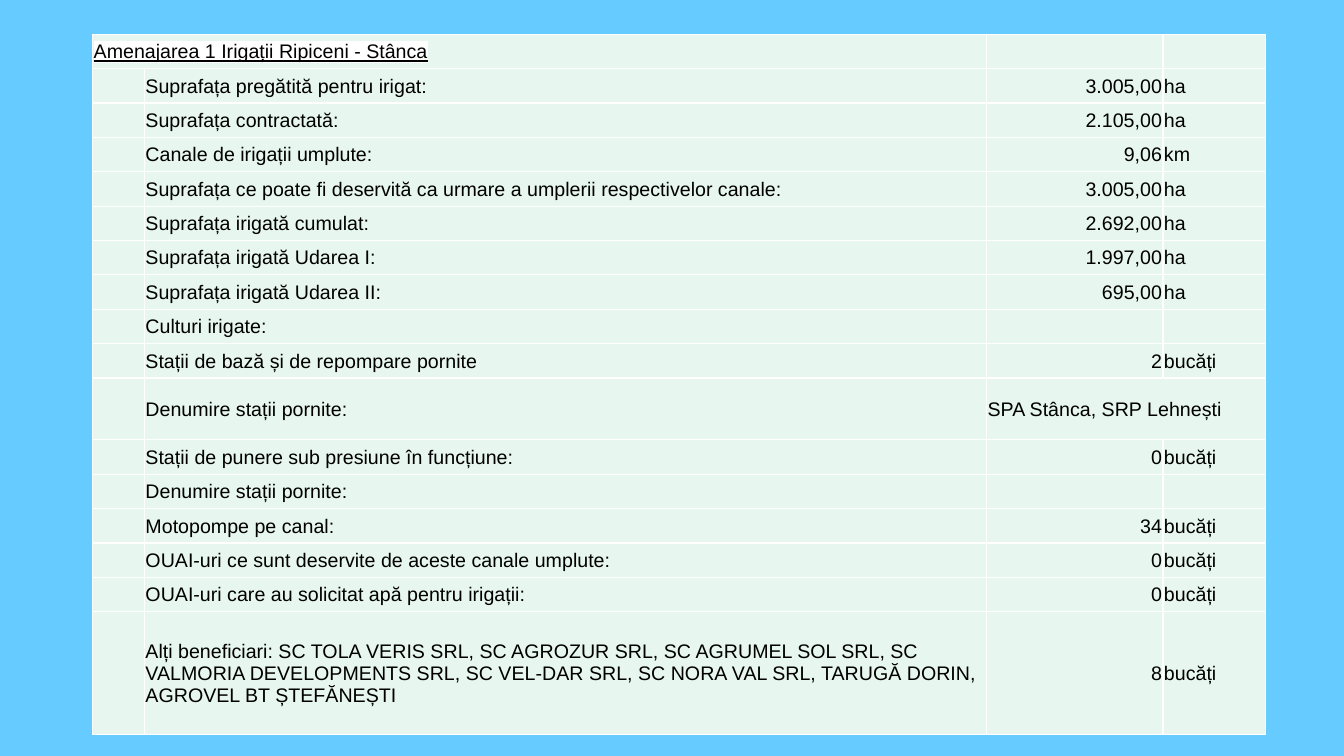
"""Build a slide with the table of irrigation figures for Ripiceni - Stânca."""
from dataclasses import dataclass

from lxml import etree
from pptx import Presentation
from pptx import util as u
from pptx.dml.color import RGBColor
from pptx.enum import text
from pptx.oxml import ns
from pptx.table import Table, _Cell


@dataclass(frozen=True)
class Theme:
    background: str = "66CCFF"
    cell: str = "E7F6EF"
    border: str = "FFFFFF"
    highlight: str = "FFFFFF"
    ink: str = "000000"
    font: str = "Arial"
    size: float = 14
    border_width: float = 1
    inset: float = 0.7


@dataclass(frozen=True)
class Figure:
    label: str
    value: str = ""
    unit: str = ""
    height: float = 24.57


THEME = Theme()
LEFT, TOP = 66.24, 24.5
COLUMN_WIDTHS = (37, 601.5, 126, 73.5)
HEADING = "Amenajarea 1 Irigații Ripiceni - Stânca"
STATIONS = "SPA Stânca, SRP Lehnești"
FIGURES = (
    Figure("Suprafața pregătită pentru irigat:", "3.005,00", "ha"),
    Figure("Suprafața contractată:", "2.105,00", "ha"),
    Figure("Canale de irigații umplute:", "9,06", "km"),
    Figure("Suprafața ce poate fi deservită ca urmare a umplerii respectivelor canale:", "3.005,00", "ha"),
    Figure("Suprafața irigată cumulat:", "2.692,00", "ha"),
    Figure("Suprafața irigată Udarea I:", "1.997,00", "ha"),
    Figure("Suprafața irigată Udarea II:", "695,00", "ha"),
    Figure("Culturi irigate:"),
    Figure("Stații de bază și de repompare pornite", "2", "bucăți"),
    Figure("Denumire stații pornite:", STATIONS, height=44.2),
    Figure("Stații de punere sub presiune în funcțiune:", "0", "bucăți"),
    Figure("Denumire stații pornite:"),
    Figure("Motopompe pe canal:", "34", "bucăți"),
    Figure("OUAI-uri ce sunt deservite de aceste canale umplute:", "0", "bucăți"),
    Figure("OUAI-uri care au solicitat apă pentru irigații:", "0", "bucăți"),
    Figure(
        "Alți beneficiari: SC TOLA VERIS SRL, SC AGROZUR SRL, SC AGRUMEL SOL SRL, SC "
        "VALMORIA DEVELOPMENTS SRL, SC VEL-DAR SRL, SC NORA VAL SRL, TARUGĂ DORIN, "
        "AGROVEL BT ȘTEFĂNEȘTI",
        "8", "bucăți", 87.9,
    ),
)


def add_solid_fill(parent: etree._Element, tag: str, color: str) -> None:
    """Append a DrawingML colour element under the given tag."""
    holder = etree.SubElement(parent, ns.qn(tag))
    etree.SubElement(holder, ns.qn("a:srgbClr"), val=color)


def style_cell(cell: _Cell) -> None:
    """Give a cell its fill, insets, borders and font."""
    cell.margin_left = cell.margin_right = cell.margin_top = u.Pt(THEME.inset)
    cell.margin_bottom = 0
    cell.vertical_anchor = text.MSO_ANCHOR.MIDDLE
    cell.fill.solid()
    cell.fill.fore_color.rgb = RGBColor.from_string(THEME.cell)
    properties = cell._tc.get_or_add_tcPr()
    for index, side in enumerate(("a:lnL", "a:lnR", "a:lnT", "a:lnB")):
        line = etree.Element(ns.qn(side), w=str(u.Pt(THEME.border_width)))
        add_solid_fill(line, "a:solidFill", THEME.border)
        properties.insert(index, line)
    font = cell.text_frame.paragraphs[0].font
    font.name = THEME.font
    font.size = u.Pt(THEME.size)
    font.color.rgb = RGBColor.from_string(THEME.ink)


def fill_heading(table: Table) -> None:
    """Write the underlined, highlighted heading across the first two columns."""
    cell = table.cell(0, 0)
    cell.merge(table.cell(0, 1))
    run = cell.text_frame.paragraphs[0].add_run()
    run.text = HEADING
    run.font.underline = True
    add_solid_fill(run._r.get_or_add_rPr(), "a:highlight", THEME.highlight)


def fill_figure(table: Table, row: int, figure: Figure) -> None:
    """Write one figure, spreading a value without a unit over two columns."""
    for column, content in enumerate((figure.label, figure.value, figure.unit), 1):
        if content:
            table.cell(row, column).text_frame.paragraphs[0].add_run().text = content
    if figure.unit:
        table.cell(row, 2).text_frame.paragraphs[0].alignment = text.PP_ALIGN.RIGHT
    elif figure.value:
        table.cell(row, 2).merge(table.cell(row, 3))


def main() -> None:
    """Build and save the presentation."""
    presentation = Presentation()
    presentation.slide_width, presentation.slide_height = u.Pt(960), u.Pt(540)
    slide = presentation.slides.add_slide(presentation.slide_layouts[6])
    slide.background.fill.solid()
    slide.background.fill.fore_color.rgb = RGBColor.from_string(THEME.background)
    heights = [Figure.height, *(figure.height for figure in FIGURES)]
    table = slide.shapes.add_table(
        len(heights), len(COLUMN_WIDTHS), u.Pt(LEFT), u.Pt(TOP),
        u.Pt(sum(COLUMN_WIDTHS)), u.Pt(sum(heights)),
    ).table
    table.first_row = table.horz_banding = False
    for column, width in zip(table.columns, COLUMN_WIDTHS):
        column.width = u.Pt(width)
    for row, height in zip(table.rows, heights):
        row.height = u.Pt(height)
    for cell in table.iter_cells():
        style_cell(cell)
    fill_heading(table)
    for row, figure in enumerate(FIGURES, 1):
        fill_figure(table, row, figure)
    presentation.save("out.pptx")


if __name__ == "__main__":
    main()
